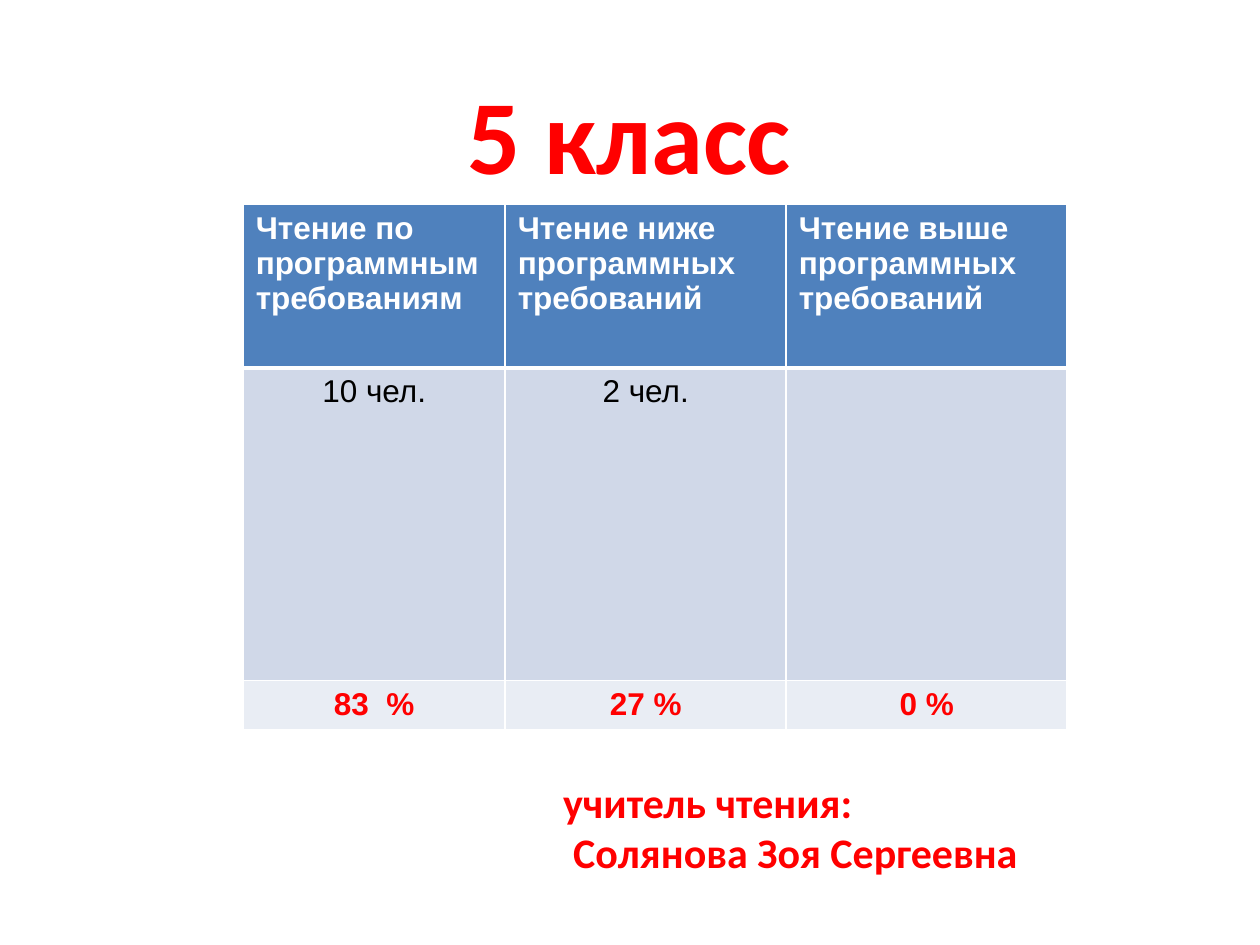
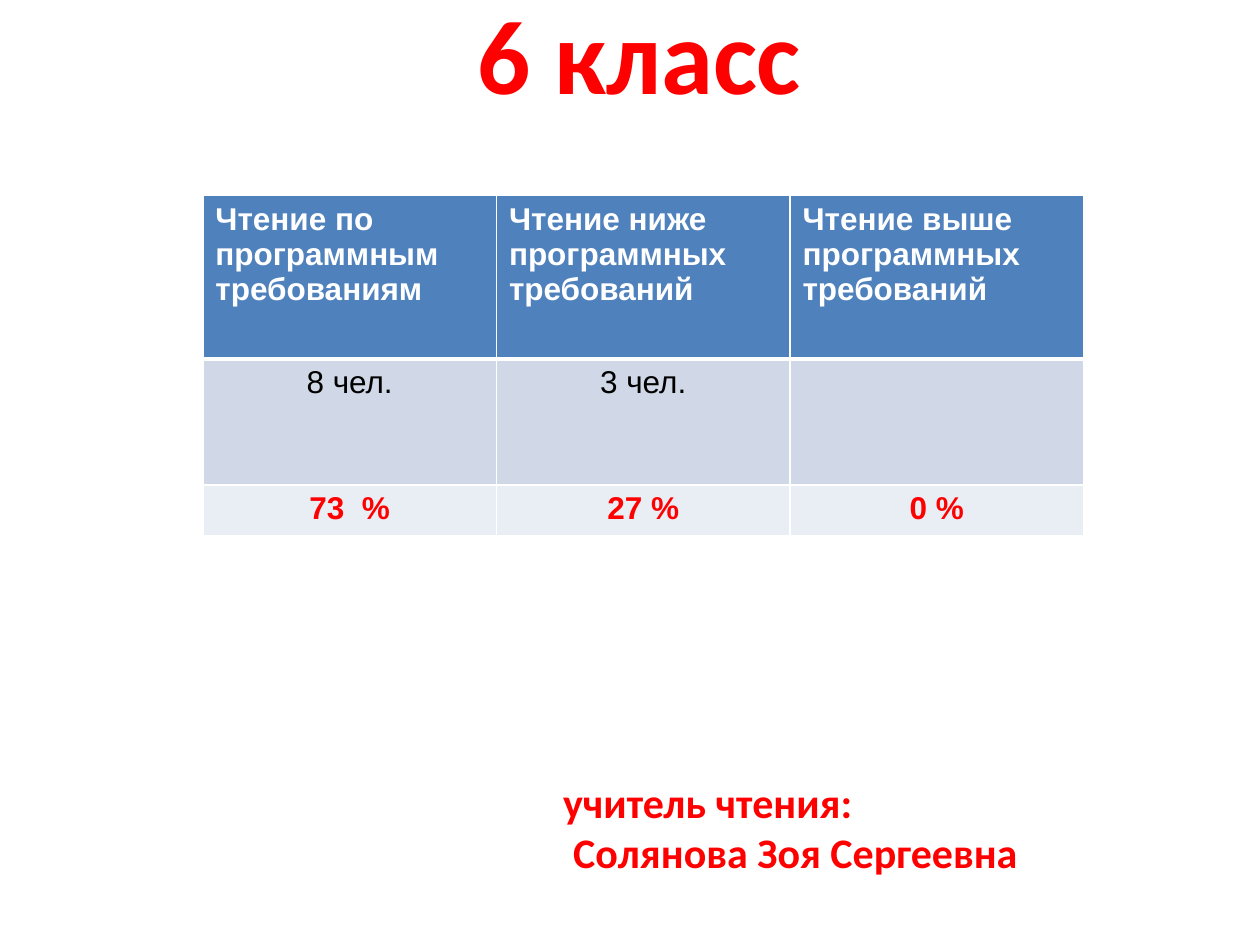
from dataclasses import dataclass

from lxml import etree
from pptx import Presentation
from pptx import util as u
from pptx.dml.color import RGBColor
from pptx.enum import text
from pptx.oxml import ns

RED, WHITE, BLACK = "FF0000", "FFFFFF", "000000"
HEADING, BODY = "Calibri", "Arial"
LEFT, CENTER = text.PP_ALIGN.LEFT, text.PP_ALIGN.CENTER
HEADERS = (
    "Чтение по программным требованиям",
    "Чтение ниже программных требований",
    "Чтение выше программных требований",
)
TEACHER = ("учитель чтения:", "Солянова Зоя Сергеевна")


@dataclass(frozen=True)
class Box:
    left: float
    top: float
    width: float
    height: float

    def emu(self) -> list[int]:
        return [u.Inches(v) for v in (self.left, self.top, self.width, self.height)]


@dataclass(frozen=True)
class RowStyle:
    fill: str
    color: str
    bold: bool
    align: text.PP_ALIGN
    top_line: float
    bottom_line: float


@dataclass(frozen=True)
class ClassReport:
    title: str
    title_box: Box
    table_left: float
    table_top: float
    col_widths: tuple[float, ...]
    row_heights: tuple[float, ...]
    pupils: tuple[str, ...]
    shares: tuple[str, ...]


ROW_STYLES = (
    RowStyle("4F81BD", WHITE, True, LEFT, 1, 3),
    RowStyle("D0D8E8", BLACK, False, CENTER, 3, 1),
    RowStyle("E9EDF4", RED, True, CENTER, 1, 1),
)
TEACHER_BOX = Box(4.37, 6.11, 5.72, 1.31)
REPORTS = (
    ClassReport("5 класс", Box(1.61, 0.3, 6.77, 1.25), 1.93, 1.62,
                (2.08, 2.23, 2.23), (1.3, 2.48, 0.39),
                ("10 чел.", "2 чел.", ""), ("83  %", "27 %", "0 %")),
    ClassReport("6 класс", Box(1.77, 0.3, 6.61, 0.62), 1.61, 1.55,
                (2.33, 2.33, 2.33), (1.3, 1.0, 0.39),
                ("8 чел.", "3 чел.", ""), ("73  %", "27 %", "0 %")),
)


def rgb(value: str) -> RGBColor:
    return RGBColor.from_string(value)


def write(p, content: str, *, font: str, size: float, color: str,
          bold: bool = True, align=LEFT, indent: float = 0) -> None:
    if indent:
        p._p.get_or_add_pPr().set("marL", str(u.Inches(indent)))
    p.alignment = align
    if not content:
        return
    r = p.add_run()
    r.text = content
    r.font.name, r.font.size, r.font.bold = font, u.Pt(size), bold
    r.font.color.rgb = rgb(color)


def add_box(slide, box: Box, anchor=text.MSO_ANCHOR.TOP):
    tf = slide.shapes.add_textbox(*box.emu()).text_frame
    tf.word_wrap = True
    tf.vertical_anchor = anchor
    return tf


def set_borders(cell, style: RowStyle) -> None:
    tc_pr = cell._tc.get_or_add_tcPr()
    widths = {"lnL": 1, "lnR": 1, "lnT": style.top_line, "lnB": style.bottom_line}
    for i, (tag, width) in enumerate(widths.items()):
        ln = etree.Element(ns.qn(f"a:{tag}"), w=str(u.Pt(width)))
        fill = etree.SubElement(ln, ns.qn("a:solidFill"))
        etree.SubElement(fill, ns.qn("a:srgbClr"), val=WHITE)
        tc_pr.insert(i, ln)


def add_results(slide, report: ClassReport) -> None:
    rows = (HEADERS, report.pupils, report.shares)
    box = Box(report.table_left, report.table_top,
              sum(report.col_widths), sum(report.row_heights))
    table = slide.shapes.add_table(len(rows), len(HEADERS), *box.emu()).table
    for column, width in zip(table.columns, report.col_widths):
        column.width = u.Inches(width)
    for row, height, style, values in zip(table.rows, report.row_heights, ROW_STYLES, rows):
        row.height = u.Inches(height)
        for cell, value in zip(row.cells, values):
            cell.fill.solid()
            cell.fill.fore_color.rgb = rgb(style.fill)
            set_borders(cell, style)
            write(cell.text_frame.paragraphs[0], value, font=BODY, size=18,
                  color=style.color, bold=style.bold, align=style.align)


def add_title(slide, report: ClassReport) -> None:
    tf = add_box(slide, report.title_box, text.MSO_ANCHOR.BOTTOM)
    tf.margin_bottom = 0
    write(tf.paragraphs[0], report.title, font=HEADING, size=60, color=RED, align=CENTER)


def add_teacher(slide) -> None:
    tf = add_box(slide, TEACHER_BOX)
    label, name = TEACHER
    write(tf.paragraphs[0], label, font=HEADING, size=24, color=RED)
    write(tf.add_paragraph(), name, font=HEADING, size=24, color=RED, indent=0.08)


def main() -> None:
    prs = Presentation()
    prs.slide_width, prs.slide_height = u.Inches(10), u.Inches(7.5)
    for report in REPORTS:
        slide = prs.slides.add_slide(prs.slide_layouts[6])
        add_results(slide, report)
        add_title(slide, report)
        add_teacher(slide)
    prs.save("out.pptx")


if __name__ == "__main__":
    main()
